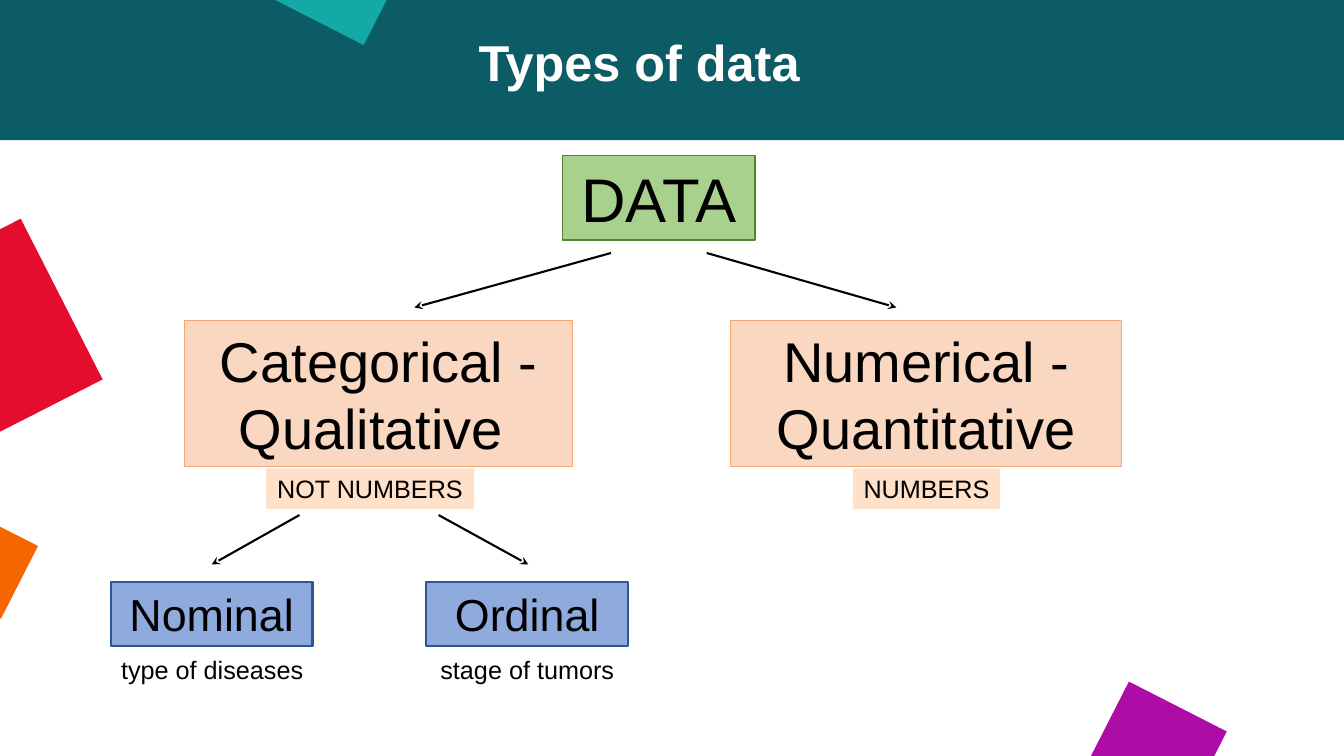
from lxml import etree
from pptx import Presentation
from pptx import util as u
from pptx.dml.color import RGBColor
from pptx.enum import shapes, text
from pptx.oxml import ns

PX = 9144  # EMU in one px, 100 px to the inch
FONT = "Arial"
HEX = {
    "band": "0C5C65", "red": "E50D2E", "purple": "AD0DA6", "orange": "F56600",
    "teal": "15A9A6", "white": "FFFFFF", "black": "000000",
    "green": "A9D18E", "moss": "548235", "peach": "F4B183", "apricot": "F3A875",
    "blue": "8FAADC", "navy": "2F5597", "cream": "FFE0C9",
}
TILES = [
    ((-109, 248, 180, 179), "red", -27),
    ((1089, 695, 109, 109), "purple", 27),
    ((-61, 518, 85, 81), "orange", 27),
    ((291, -73, 98, 101), "teal", 27),
]
KINDS = [
    ((183, 318, 385, 145), "Categorical - Qualitative "),
    ((725, 318, 387, 145), "Numerical - Quantitative"),
]
SCALES = [(110, "Nominal"), (423, "Ordinal")]
TAGS = [(264, 206, "NOT NUMBERS"), (846, 146, "NUMBERS")]
HINTS = [(109, 203, "type of diseases"), (426, 194, "stage of tumors")]
ARROWS = [
    (606, 251, 411, 305), (701, 251, 889, 305),
    (297, 511, 210, 560), (435, 511, 524, 560),
]


def emu(box):
    return [n * PX for n in box]


def color(name):
    return RGBColor.from_string(HEX[name])


def write(shape, words, size, ink="black", bold=False, wrap=True,
          anchor=text.MSO_ANCHOR.MIDDLE, space=None):
    frame = shape.text_frame
    frame.word_wrap = wrap
    frame.vertical_anchor = anchor
    frame.text = words
    para = frame.paragraphs[0]
    para.alignment = text.PP_ALIGN.CENTER
    para.line_spacing = space
    font = para.runs[0].font
    font.name, font.size, font.bold = FONT, u.Pt(size), bold
    font.color.rgb = color(ink)


def block(slide, box, fill, edge=None, width=1, turn=0, alpha=None):
    shape = slide.shapes.add_shape(shapes.MSO_SHAPE.RECTANGLE, *emu(box))
    shape.shadow.inherit = False
    shape.rotation = turn
    shape.fill.solid()
    shape.fill.fore_color.rgb = color(fill)
    if alpha:
        tint = shape.element.spPr.find(ns.qn("a:solidFill"))[0]
        etree.SubElement(tint, ns.qn("a:alpha"), val=str(alpha * 1000))
    if edge:
        shape.line.color.rgb = color(edge)
        shape.line.width = u.Pt(width)
    else:
        shape.line.fill.background()
    return shape


def arrow(slide, ends):
    line = slide.shapes.add_connector(shapes.MSO_CONNECTOR.STRAIGHT, *emu(ends))
    line.line.color.rgb = color("black")
    line.line.width = u.Pt(1.5)
    etree.SubElement(line.line._get_or_add_ln(), ns.qn("a:tailEnd"), type="stealth")
    etree.SubElement(line.element.spPr, ns.qn("a:effectLst"))


def head(slide):
    block(slide, (0, 0, 1333, 139), "band")
    for box, fill, turn in TILES:
        block(slide, box, fill, turn=turn)
    title = slide.shapes.title
    title.left, title.top, title.width, title.height = emu((156, 33, 956, 81))
    write(title, "Types of data", 36, ink="white", bold=True,
          anchor=text.MSO_ANCHOR.TOP, space=0.9)
    slide.shapes.element.append(title.element)  # in front of the band


def tree(slide):
    write(block(slide, (558, 154, 191, 84), "green", "moss"), "DATA", 44)
    for box, words in KINDS:
        kind = block(slide, box, "peach", "apricot", 0.75, alpha=50)
        write(kind, words, 40)
    for left, words in SCALES:
        scale = block(slide, (left, 577, 200, 64), "blue", "navy", 1.5)
        write(scale, words, 32)
    for ends in ARROWS:
        arrow(slide, ends)
    for left, width, words in HINTS:
        hint = slide.shapes.add_textbox(*emu((left, 644, width, 40)))
        write(hint, words, 18, wrap=False)
    for left, width, words in TAGS:
        tag = block(slide, (left, 465, width, 40), "cream")
        write(tag, words, 18, wrap=False)


def main():
    deck = Presentation()
    deck.slide_width, deck.slide_height = emu((1333, 750))
    slide = deck.slides.add_slide(deck.slide_layouts[5])
    head(slide)
    tree(slide)
    deck.save("out.pptx")


if __name__ == "__main__":
    main()
